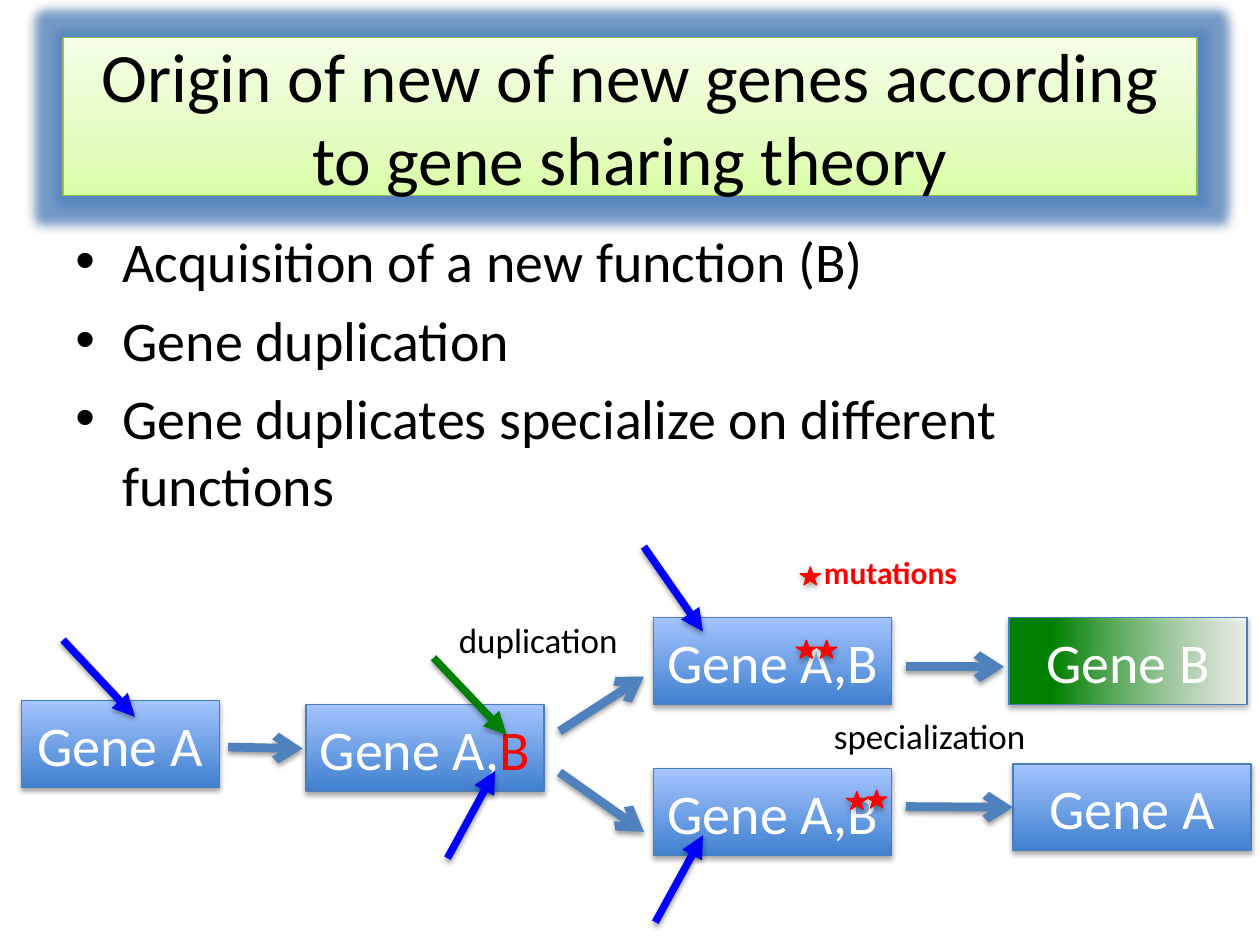
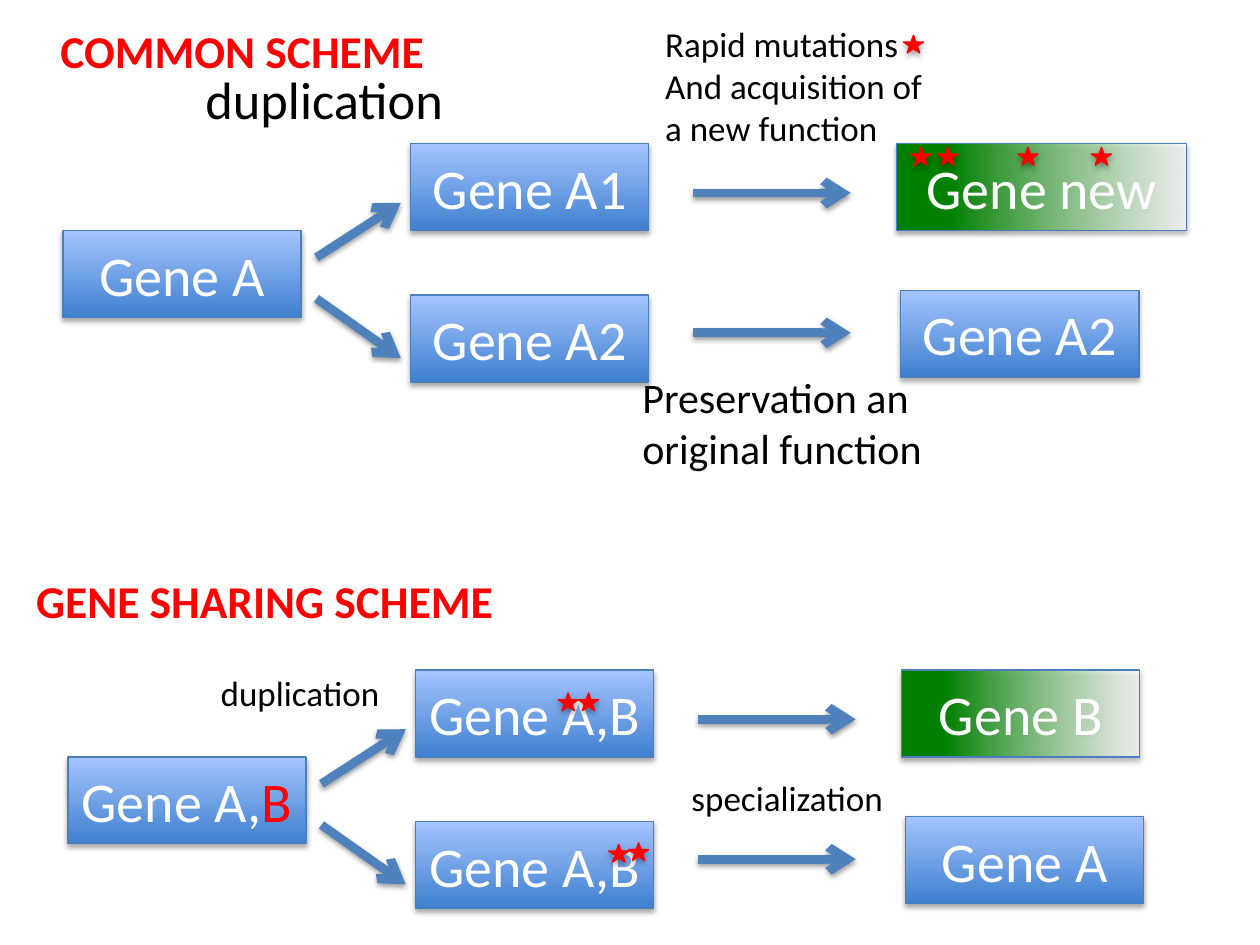
from lxml import etree
from pptx import Presentation
from pptx import util as u
from pptx.dml.color import RGBColor
from pptx.enum import shapes, text
from pptx.oxml.ns import qn

FONT = "Calibri"
COLOURS = {
    "text": "000000", "white": "FFFFFF", "red": "FF0000",
    "green": "008000", "signal": "0000FF", "arrow": "4F81BD",
    "gene_line": "4B7EBC", "gene_dark": "3F80CE", "gene_light": "A4C4FF",
    "title_line": "98B955", "title_dark": "DAFDA7",
    "title_mid": "E4FCC2", "title_light": "F5FFE7",
}
# Gradient stops: position %, colour, opacity %
GENE_FILL = [(0, "gene_dark", 100), (100, "gene_light", 100)]
NEW_FILL = [(18, "green", 100), (100, "white", 71)]
TITLE_FILL = [(0, "title_dark", 100), (35, "title_mid", 100),
              (100, "title_light", 100)]
GENE_WIDTH, GENE_HEIGHT = 4.8, 1.75
STAR_WIDTH, STAR_HEIGHT = 0.41, 0.36
SHARED_PARENT = [("Gene A,", "white"), ("B", "red")]
CENTRED = {"alignment": text.PP_ALIGN.CENTER}


def rgb(name):
    return RGBColor.from_string(COLOURS[name])


def apply(target, values):
    for name, value in values.items():
        setattr(target, name, value)


def child(parent, tag, **values):
    node = etree.SubElement(parent, qn(tag))
    for name, value in values.items():
        node.set(name, str(value))
    return node


def add_colour(parent, name, opacity):
    colour = child(parent, "a:srgbClr", val=COLOURS[name])
    if opacity < 100:
        child(colour, "a:alpha", val=opacity * 1000)


# Effects and fills
def add_shadow(effects, opacity=35, blur=3.1, distance=1.8, angle=90):
    shadow = child(effects, "a:outerShdw", blurRad=u.Pt(blur),
                   dist=u.Pt(distance), dir=angle * 60000, rotWithShape=0)
    add_colour(shadow, "text", opacity)


def fill_gradient(shape, stops, angle):
    shape.fill.gradient()
    shape.fill.gradient_angle = angle
    stop_list = shape._element.spPr.find(qn("a:gradFill")).find(qn("a:gsLst"))
    for old_stop in list(stop_list):
        stop_list.remove(old_stop)
    for position, colour, opacity in stops:
        add_colour(child(stop_list, "a:gs", pos=position * 1000),
                   colour, opacity)


# Text
def add_span(para, words, size, colour, bold=False):
    span = para.add_run()
    span.text = words
    apply(span.font, {"name": FONT, "size": u.Pt(size), "bold": bold})
    span.font.color.rgb = rgb(colour)


def add_label(page, left, top, width, height, lines, size=20,
              colour="text", bold=False):
    box = page.shapes.add_textbox(*map(u.Cm, (left, top, width, height)))
    frame = box.text_frame
    apply(frame, {"word_wrap": False,
                  "auto_size": text.MSO_AUTO_SIZE.SHAPE_TO_FIT_TEXT})
    for index, line in enumerate(lines):
        para = frame.paragraphs[0] if index == 0 else frame.add_paragraph()
        add_span(para, line, size, colour, bold)


def add_bullets(page, left, top, width, height, lines):
    box = page.shapes.add_textbox(*map(u.Cm, (left, top, width, height)))
    frame = box.text_frame
    frame.word_wrap = True
    for index, line in enumerate(lines):
        para = frame.paragraphs[0] if index == 0 else frame.add_paragraph()
        para.space_before = u.Pt(6.4)
        properties = para._p.get_or_add_pPr()
        apply_indent = {"marL": u.Cm(0.95), "indent": -u.Cm(0.95)}
        for name, value in apply_indent.items():
            properties.set(name, str(value))
        child(properties, "a:buFont", typeface="Arial")
        child(properties, "a:buChar", char="•")
        add_span(para, line, 32, "text")


# Shapes
def add_panel(page, kind, left, top, width, height, line):
    shape = page.shapes.add_shape(kind, *map(u.Cm, (left, top, width, height)))
    shape.line.color.rgb = rgb(line)
    shape.line.width = u.Pt(0.75)
    shape.shadow.inherit = False
    return shape, shape._element.spPr.find(qn("a:effectLst"))


def add_title(page, words):
    shape, effects = add_panel(page, shapes.MSO_SHAPE.RECTANGLE,
                               1.27, 0.76, 22.86, 3.18, "title_line")
    fill_gradient(shape, TITLE_FILL, 90)
    add_colour(child(effects, "a:glow", rad=u.Pt(11)), "arrow", 75)
    add_shadow(effects, 15, 6, 0, 225)
    apply(shape.text_frame, {"word_wrap": True,
                             "vertical_anchor": text.MSO_ANCHOR.MIDDLE})
    para = shape.text_frame.paragraphs[0]
    apply(para, CENTRED)
    add_span(para, words, 39.6, "text")


def add_gene(page, left, top, spans, width=GENE_WIDTH, is_new=False):
    shape, effects = add_panel(page, shapes.MSO_SHAPE.RECTANGLE, left, top,
                               width, GENE_HEIGHT, "gene_line")
    if is_new:
        fill_gradient(shape, NEW_FILL, 0)
    else:
        fill_gradient(shape, GENE_FILL, 90)
    add_shadow(effects)
    apply(shape.text_frame, {"word_wrap": False,
                             "vertical_anchor": text.MSO_ANCHOR.MIDDLE})
    para = shape.text_frame.paragraphs[0]
    apply(para, CENTRED)
    for words, colour in spans:
        add_span(para, words, 32, colour)
    return shape


def add_stars(page, places):
    for left, top in places:
        star, effects = add_panel(page, shapes.MSO_SHAPE.STAR_5_POINT, left,
                                  top, STAR_WIDTH, STAR_HEIGHT, "red")
        star.fill.solid()
        star.fill.fore_color.rgb = rgb("red")
        add_shadow(effects)


def add_arrow(page, start, end, colour="arrow", width=5, head="arrow"):
    arrow = page.shapes.add_connector(shapes.MSO_CONNECTOR.STRAIGHT,
                                      *map(u.Cm, (*start, *end)))
    arrow.line.color.rgb = rgb(colour)
    arrow.line.width = u.Pt(width)
    properties = arrow._element.spPr
    child(properties.find(qn("a:ln")), "a:tailEnd", type=head)
    add_shadow(child(properties, "a:effectLst"), 38, 3.1, 1.6)
    return arrow


# Schemes: one gene is duplicated, and each copy leads to a result
def add_scheme(page, left, top, parent, copies, results, arrow_span,
               result_left, new_width=GENE_WIDTH, joined=False):
    def plain(words):
        return [(words, "white")]

    add_gene(page, left, top + 1.75, parent)
    for words, drop in zip(copies, (0, 3.05)):
        add_gene(page, left + 7.01, top + drop, plain(words))
    for start, end in ((2.29, 1.19), (3.12, 4.32)):
        add_arrow(page, (left + 5.11, top + start), (left + 6.81, top + end))

    add_gene(page, left + result_left, top, plain(results[0]),
             new_width, is_new=True)
    kept = add_gene(page, left + result_left + 0.08, top + 2.95,
                    plain(results[1]))
    arrow_left, arrow_right = (left + x for x in arrow_span)
    for drop in (0.99, 3.81):
        arrow = add_arrow(page, (arrow_left, top + drop),
                          (arrow_right, top + drop))
    if joined:
        arrow.end_connect(kept, 1)


def add_sharing_scheme(page, left, top, arrow_span, result_left, joined=False):
    add_scheme(page, left, top, SHARED_PARENT, ["Gene A,B"] * 2,
               ["Gene B", "Gene A"], arrow_span, result_left, joined=joined)
    add_stars(page, [(left + x, top + y) for x, y in (
        (9.88, 0.46), (10.29, 0.46), (10.9, 3.51), (11.3, 3.48))])
    add_label(page, left + 2.83, top - 0.1, 3.73, 1.12, ["duplication"])


def build_theory(page):
    add_title(page,
              "Origin of new of new genes according to gene sharing theory")
    add_bullets(page, 1.27, 4.45, 22.86, 12.57, [
        "Acquisition of a new function (B)",
        "Gene duplication",
        "Gene duplicates specialize on different functions",
    ])
    add_gene(page, 0.43, 14.12, [("Gene A", "white")], 3.99)
    add_arrow(page, (4.6, 15.06), (6.1, 15.09))
    add_sharing_scheme(page, 6.17, 12.45, (12.09, 14.07), 14.17, joined=True)
    add_label(page, 16.56, 14.27, 4.42, 1.12, ["specialization"])

    # Legend
    add_stars(page, [(16.13, 11.43)])
    add_label(page, 16.36, 11.02, 3.23, 1.02, ["mutations"], 18, "red", True)

    # Signals that act on the genes
    for start, end, colour in (
            ((8.74, 13.26), (10.21, 14.81), "green"),
            ((1.27, 12.9), (2.72, 14.45), "signal"),
            ((9.02, 17.3), (9.98, 15.54), "signal"),
            ((12.98, 11.02), (14.17, 12.73), "signal"),
            ((13.21, 18.59), (14.17, 16.84), "signal")):
        add_arrow(page, start, end, colour, 4.25, "triangle")


def build_comparison(page):
    # Common scheme
    add_scheme(page, 1.27, 2.9, [("Gene A", "white")], ["Gene A1", "Gene A2"],
               ["Gene new", "Gene A2"], (12.7, 15.88), 16.81, 5.84)
    add_label(page, 3.89, 1.22, 5.36, 1.55, ["duplication"], 30)
    add_label(page, 12.7, 7.37, 6.2, 2.31,
              ["Preservation an", "original function"], 24)
    add_label(page, 13.16, 0.33, 5.74, 2.82,
              ["Rapid mutations", "And acquisition of", "a new function"])
    add_stars(page, [(18.21, 0.71)])
    add_stars(page, [(left, 2.97) for left in (18.36, 18.9, 20.52, 22)])

    # Gene sharing scheme
    add_sharing_scheme(page, 1.37, 13.51, (12.7, 15.88), 16.81)
    add_label(page, 13.69, 15.52, 4.42, 1.12, ["specialization"])

    # Headings
    add_label(page, 0.97, 0.33, 7.92, 1.37, ["COMMON SCHEME"], 26, "red", True)
    add_label(page, 0.48, 11.43, 9.8, 1.37, ["GENE SHARING SCHEME"], 26,
              "red", True)


def main():
    deck = Presentation()
    apply(deck, {"slide_width": u.Cm(25.4), "slide_height": u.Cm(19.05)})
    for build in (build_theory, build_comparison):
        build(deck.slides.add_slide(deck.slide_layouts[6]))
    deck.save("out.pptx")


if __name__ == "__main__":
    main()
